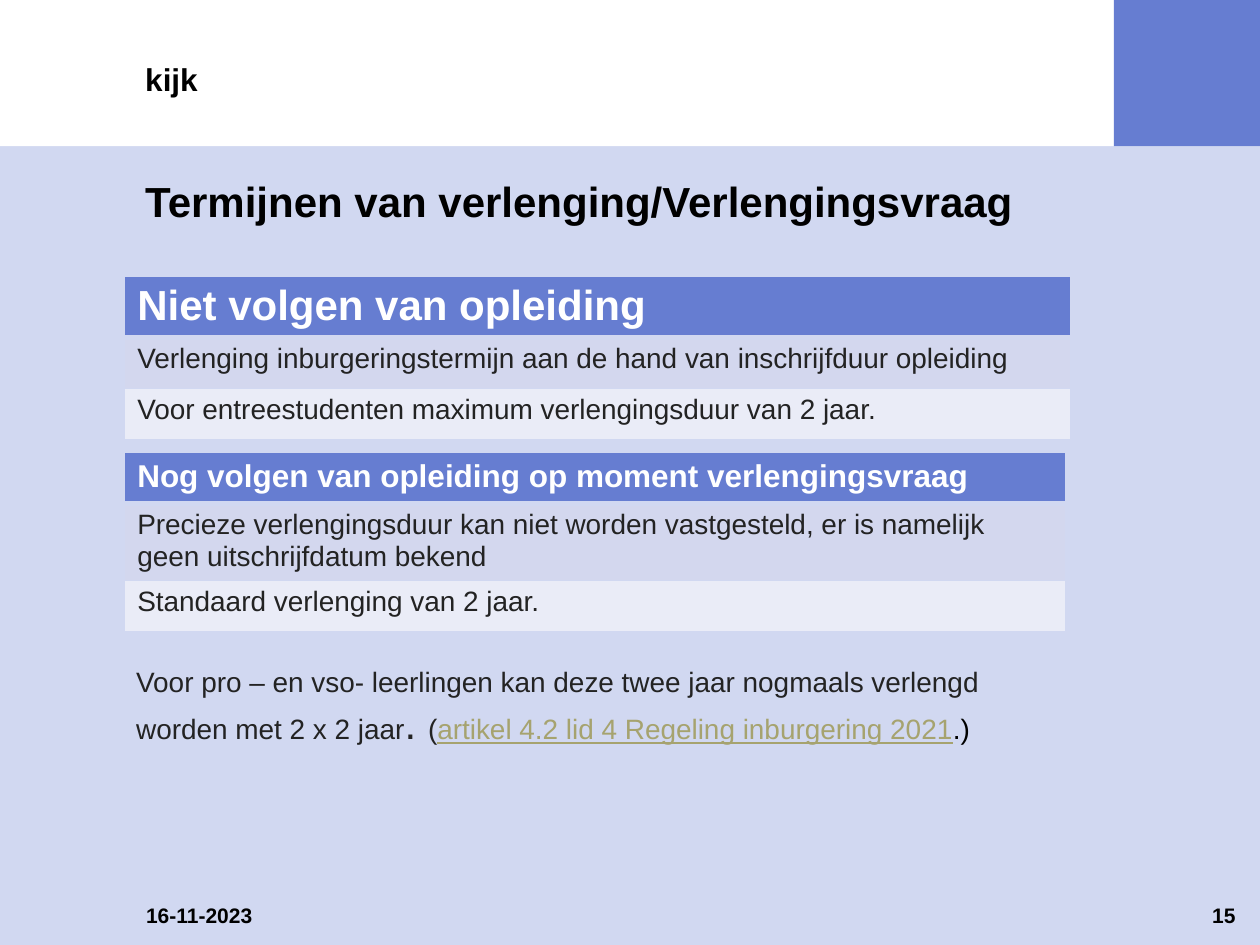
"""Build the slide about extension periods for the civic integration term."""
from lxml import etree
from pptx import Presentation
from pptx.dml.color import RGBColor
from pptx.enum.shapes import MSO_SHAPE
from pptx.enum.text import MSO_ANCHOR, MSO_AUTO_SIZE, PP_ALIGN
from pptx.oxml.ns import qn
from pptx.util import Pt

RECT = MSO_SHAPE.RECTANGLE
TOP, BOTTOM = MSO_ANCHOR.TOP, MSO_ANCHOR.BOTTOM
LEFT, RIGHT = PP_ALIGN.LEFT, PP_ALIGN.RIGHT
NO_FIT, GROW = MSO_AUTO_SIZE.NONE, MSO_AUTO_SIZE.SHAPE_TO_FIT_TEXT

BLACK = RGBColor(0x00, 0x00, 0x00)
WHITE = RGBColor(0xFF, 0xFF, 0xFF)
BLUE = RGBColor(0x66, 0x7D, 0xD1)
PALE = RGBColor(0xD1, 0xD8, 0xF1)
BAND_1 = RGBColor(0xD3, 0xD7, 0xEE)
BAND_2 = RGBColor(0xEA, 0xEC, 0xF7)
DARK = RGBColor(0x23, 0x23, 0x23)
LINK = RGBColor(0xA6, 0xA3, 0x6F)


def add_text(p, text, size=16, color=DARK, bold=False, underline=False, align=LEFT):
    """Append a formatted run to a paragraph."""
    p.alignment = align
    r = p.add_run()
    r.text = text
    r.font.name = "Arial"
    r.font.size = Pt(size)
    r.font.color.rgb = color
    r.font.bold = bold
    r.font.underline = underline


class Deck:
    """Hold the style and the current slide."""

    def __init__(self, prs):
        self.slide = prs.slides.add_slide(prs.slide_layouts[5])
        fill = self.slide.background.fill
        fill.solid()
        fill.fore_color.rgb = PALE

    def box(self, x, y, w, h, color):
        """Add a plain filled rectangle."""
        sp = self.slide.shapes.add_shape(RECT, Pt(x), Pt(y), Pt(w), Pt(h))
        sp.shadow.inherit = False
        sp.fill.solid()
        sp.fill.fore_color.rgb = color
        sp.line.fill.background()

    def frame(self, tf, text, anchor=TOP, **fmt):
        """Fill a text frame without margins with one bold black line."""
        tf.word_wrap = True
        tf.auto_size = NO_FIT
        tf.vertical_anchor = anchor
        tf.margin_left = tf.margin_top = tf.margin_right = tf.margin_bottom = 0
        add_text(tf.paragraphs[0], text, color=BLACK, bold=True, **fmt)

    def title(self, x, y, w, h, text):
        """Place and fill the title placeholder."""
        sp = self.slide.shapes.title
        sp.left, sp.top, sp.width, sp.height = Pt(x), Pt(y), Pt(w), Pt(h)
        self.frame(sp.text_frame, text, size=24)

    def label(self, x, y, w, h, text, **fmt):
        """Add a one-line label."""
        sp = self.slide.shapes.add_textbox(Pt(x), Pt(y), Pt(w), Pt(h))
        self.frame(sp.text_frame, text, **fmt)

    def note(self, x, y, w, h, runs):
        """Add a paragraph made of differently formatted runs."""
        sp = self.slide.shapes.add_textbox(Pt(x), Pt(y), Pt(w), Pt(h))
        tf = sp.text_frame
        tf.word_wrap = True
        tf.auto_size = GROW
        for text, fmt in runs:
            add_text(tf.paragraphs[0], text, **fmt)

    def borders(self, cell, bottom):
        """Draw the four cell borders in the background colour."""
        tc_pr = cell._tc.get_or_add_tcPr()
        for side, width in (("L", 1), ("R", 1), ("T", 1), ("B", bottom)):
            ln = etree.SubElement(tc_pr, qn(f"a:ln{side}"), w=str(Pt(width)))
            fill = etree.SubElement(ln, qn("a:solidFill"))
            etree.SubElement(fill, qn("a:srgbClr"), val=str(PALE))

    def table(self, x, y, w, heights, head_size, texts):
        """Add a one-column table with a blue header row."""
        gf = self.slide.shapes.add_table(
            len(texts), 1, Pt(x), Pt(y), Pt(w), Pt(sum(heights)))
        table = gf.table
        table.horz_banding = False
        for i, (text, height) in enumerate(zip(texts, heights)):
            table.rows[i].height = Pt(height)
            cell = table.cell(i, 0)
            head = i == 0
            self.borders(cell, 3 if head else 1)
            cell.fill.solid()
            cell.fill.fore_color.rgb = (BLUE, BAND_1, BAND_2)[i]
            add_text(cell.text_frame.paragraphs[0], text,
                     size=head_size if head else 16,
                     color=WHITE if head else DARK, bold=head)


def main():
    """Compose and save the slide."""
    prs = Presentation()
    prs.slide_width, prs.slide_height = Pt(720), Pt(540)
    deck = Deck(prs)
    deck.box(0, 0, 720, 83.5, WHITE)
    deck.box(636.5, 0, 83.5, 83.5, BLUE)
    deck.title(83, 100, 541, 68, "Termijnen van verlenging/Verlengingsvraag")
    deck.label(83.5, 516, 150, 24, "16-11-2023", size=12)
    deck.label(677.5, 516, 28.5, 24, "15", size=12, align=RIGHT)
    deck.label(83, 20, 541, 36, "kijk", size=18, anchor=BOTTOM)
    deck.table(71.25, 158, 540.5, (34.8, 29.2, 29.2), 24, (
        "Niet volgen van opleiding",
        "Verlenging inburgeringstermijn aan de hand van inschrijfduur opleiding",
        "Voor entreestudenten maximum verlengingsduur van 2 jaar."))
    deck.table(71.25, 258.5, 538, (29.2, 44, 29.2), 18, (
        "Nog volgen van opleiding op moment verlengingsvraag",
        "Precieze verlengingsduur kan niet worden vastgesteld, er is namelijk "
        "geen uitschrijfdatum bekend",
        "Standaard verlenging van 2 jaar."))
    deck.note(70.75, 376, 526, 55.5, (
        ("Voor pro – en vso- leerlingen kan deze twee jaar nogmaals verlengd "
         "worden met 2 x 2 jaar", {}),
        (". ", {"size": 24}),
        ("(", {}),
        ("artikel 4.2 lid 4 Regeling inburgering 2021",
         {"color": LINK, "underline": True}),
        (".)", {"color": BLACK})))
    prs.save("out.pptx")


if __name__ == "__main__":
    main()
